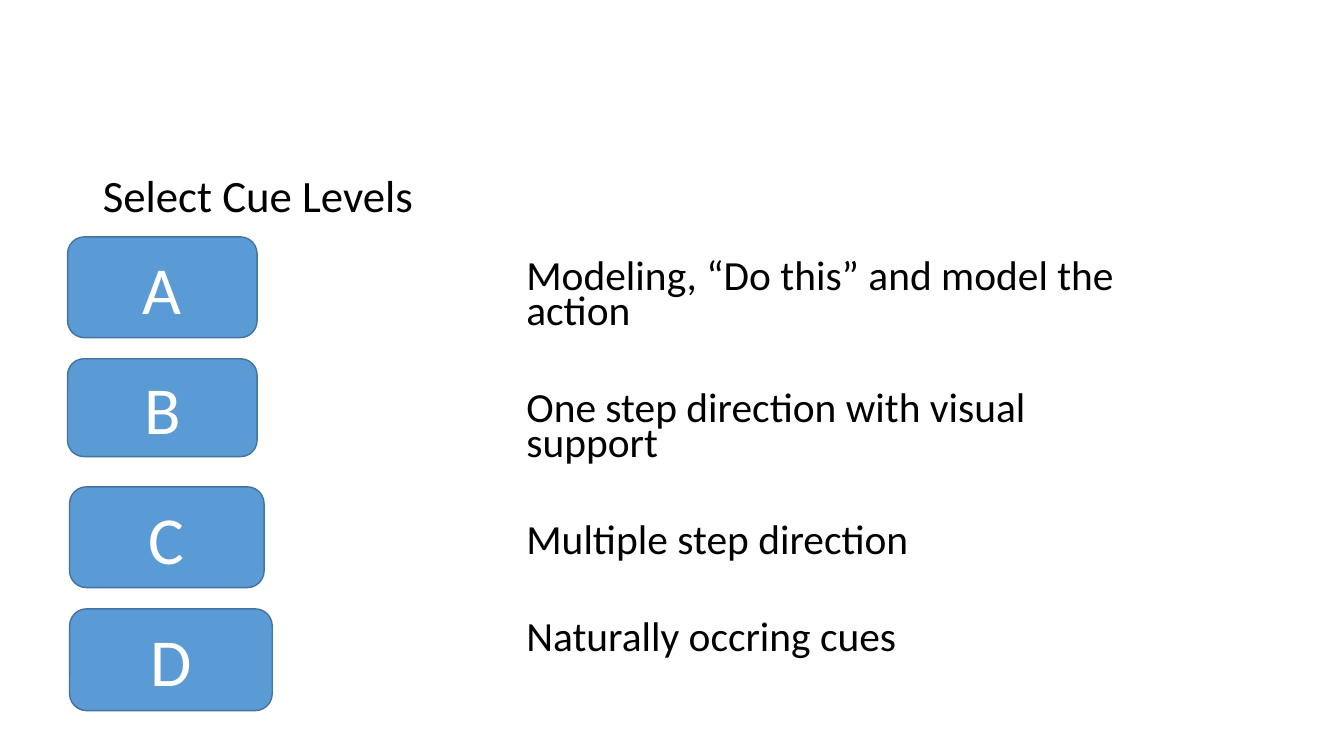
from pptx import Presentation
from pptx import util as u
from pptx.dml.color import RGBColor
from pptx.enum import shapes, text
from pptx.oxml.ns import qn

HUES = {"ink": "000000", "fill": "5B9BD5", "edge": "43739E", "pale": "FFFFFF"}
CUES = [
    "Modeling, “Do this” and model the action",
    "One step direction with visual support",
    "Multiple step direction",
    "Naturally occring cues",
]
KEYS = [
    ("A", 0.67, 2.35, 1.88, 1),
    ("B", 0.67, 3.56, 1.88, 0.97),
    ("C", 0.69, 4.83, 1.93, 1),
    ("D", 0.69, 6.04, 2.01, 1.01),
]


def hue(name):
    return RGBColor.from_string(HUES[name])


def apply(item, form):
    for name, value in form.items():
        setattr(item, name, value)


def place(shape, *box):
    sides = ("left", "top", "width", "height")
    apply(shape, dict(zip(sides, map(u.Inches, box))))


def style(para, size, color, **form):
    apply(para, form)
    apply(para.font, {"name": "Calibri", "size": u.Pt(size)})
    para.font.color.rgb = hue(color)


def frame(shape, anchor):
    apply(shape.text_frame, {
        "word_wrap": True,
        "auto_size": text.MSO_AUTO_SIZE.NONE,
        "vertical_anchor": anchor,
    })
    return shape.text_frame


def add_title(slide):
    title = slide.shapes.title
    place(title, 0.92, 0.5, 4.3, 1.75)
    area = frame(title, text.MSO_ANCHOR.BOTTOM)
    area.text = "Select Cue Levels"
    style(area.paragraphs[0], 32, "ink", alignment=text.PP_ALIGN.LEFT,
          line_spacing=0.9)


def add_list(slide):
    body = slide.placeholders[1]
    place(body, 5.12, 2.56, 6.13, 4.44)
    area = frame(body, text.MSO_ANCHOR.TOP)
    area.text = "\n".join(CUES)
    for rank, para in enumerate(area.paragraphs):
        style(para, 29.6, "ink", line_spacing=0.7,
              space_before=u.Pt(44.5 if rank else 10))
        props = para._p.get_or_add_pPr()
        props.set("marL", "0")
        props.set("indent", "0")
        props.append(props.makeelement(qn("a:buNone"), {}))


def add_key(slide, label, *box):
    key = slide.shapes.add_shape(
        shapes.MSO_SHAPE.ROUNDED_RECTANGLE, *map(u.Inches, box))
    key.shadow.inherit = False
    key.fill.solid()
    key.fill.fore_color.rgb = hue("fill")
    key.line.color.rgb = hue("edge")
    key.line.width = u.Pt(1)
    area = frame(key, text.MSO_ANCHOR.MIDDLE)
    area.text = label
    style(area.paragraphs[0], 48, "pale", alignment=text.PP_ALIGN.CENTER)


def main():
    deck = Presentation()
    deck.slide_width, deck.slide_height = u.Inches(13.33), u.Inches(7.5)
    slide = deck.slides.add_slide(deck.slide_layouts[1])
    add_title(slide)
    add_list(slide)
    for key in KEYS:
        add_key(slide, *key)
    deck.save("out.pptx")


if __name__ == "__main__":
    main()
